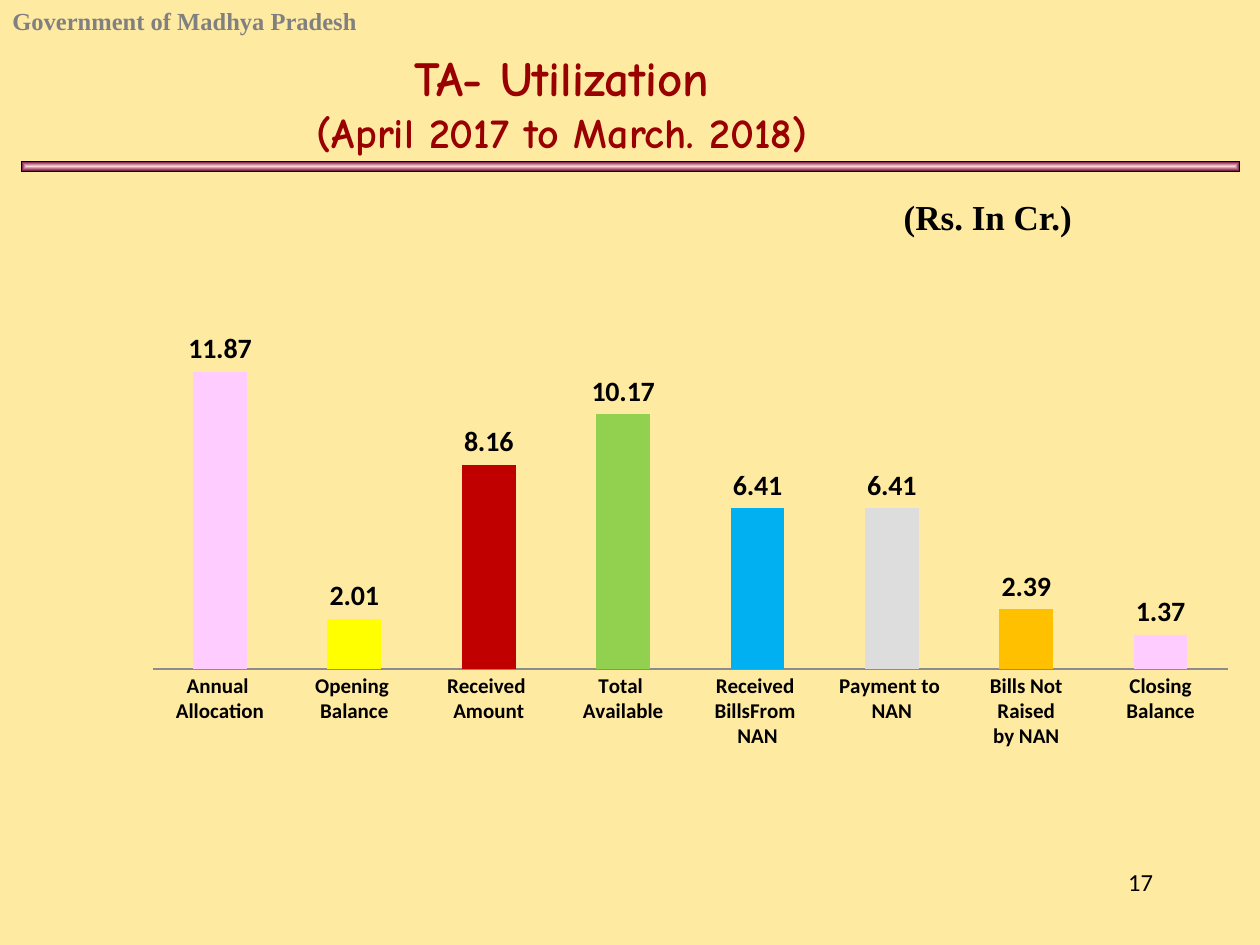
from lxml import etree
from pptx import Presentation, util as u
from pptx.chart.data import CategoryChartData
from pptx.dml.color import RGBColor
from pptx.enum import chart as ch, shapes, text as tx
from pptx.oxml import parse_xml
from pptx.oxml.ns import qn, nsdecls

CREAM = RGBColor(0xFF, 0xEA, 0xA2)
BLACK = RGBColor(0, 0, 0)
GREY = RGBColor(0x80, 0x80, 0x80)
AXIS = RGBColor(0x8C, 0x8C, 0x8C)
RED = RGBColor(0x99, 0, 0)
ROSE = RGBColor(0xFF, 0xD5, 0xD5)
PLUM = RGBColor(0x66, 0, 0x33)
PINK = RGBColor(0xFF, 0xCC, 0xFF)
YELLOW = RGBColor(0xFF, 0xFF, 0)
CRIMSON = RGBColor(0xC0, 0, 0)
GREEN = RGBColor(0x92, 0xD0, 0x50)
BLUE = RGBColor(0, 0xB0, 0xF0)
SILVER = RGBColor(0xDD, 0xDD, 0xDD)
AMBER = RGBColor(0xFF, 0xC0, 0)

BARS = [
    ("Annual \nAllocation", 11.87, PINK),
    ("Opening \nBalance", 2.01, YELLOW),
    ("Received \nAmount", 8.16, CRIMSON),
    ("Total \nAvailable", 10.17, GREEN),
    ("Received \nBillsFrom \nNAN", 6.41, BLUE),
    ("Payment to \nNAN", 6.41, SILVER),
    ("Bills Not Raised\nby NAN", 2.39, AMBER),
    ("Closing Balance", 1.37, PINK),
]

prs = Presentation()
prs.slide_width, prs.slide_height = u.Inches(10), u.Inches(7.5)
slide = prs.slides.add_slide(prs.slide_layouts[5])
slide.background.fill.solid()
slide.background.fill.fore_color.rgb = CREAM


def write(lines, box, sizes, face="Times New Roman", color=BLACK, bold=True,
          align=tx.PP_ALIGN.CENTER, anchor=tx.MSO_ANCHOR.TOP, shape=None):
    """Fill a shape, or a new text box, with one paragraph per line."""
    left, top, wide, high = map(u.Inches, box)
    if shape is None:
        shape = slide.shapes.add_textbox(left, top, wide, high)
    shape.left, shape.top, shape.width, shape.height = left, top, wide, high
    frame = shape.text_frame
    frame.word_wrap = True
    frame.auto_size = tx.MSO_AUTO_SIZE.NONE
    frame.vertical_anchor = anchor
    frame.text = "\n".join(lines)
    for para, size in zip(frame.paragraphs, sizes):
        para.alignment = align
        font = para.runs[0].font
        font.name, font.size, font.bold = face, u.Pt(size), bold
        font.color.rgb = color


write(["Government of Madhya Pradesh"], (0, 0, 6.67, 0.34), [14],
      color=GREY, align=tx.PP_ALIGN.LEFT)

# Rule under the title, light in the middle and dark at the edges
rule = slide.shapes.add_shape(shapes.MSO_SHAPE.RECTANGLE, u.Inches(0.17),
                              u.Inches(1.28), u.Inches(9.67), u.Inches(0.08))
rule.shadow.inherit = False
rule.line.color.rgb = BLACK
rule.line.width = u.Pt(0.5)
rule.fill.gradient()
for stop, color in zip(rule.fill.gradient_stops, (ROSE, PLUM)):
    stop.color.rgb = color
grad = rule.fill._xPr.find(qn("a:gradFill"))
grad.replace(grad.find(qn("a:lin")), parse_xml(
    f'<a:path {nsdecls("a")} path="shape">'
    '<a:fillToRect l="50000" t="50000" r="50000" b="50000"/></a:path>'))

write(["TA- Utilization", "(April 2017 to March. 2018)"],
      (0, 0.32, 8.92, 0.98), [28, 24], face="Comic Neue", color=RED,
      anchor=tx.MSO_ANCHOR.MIDDLE, shape=slide.shapes.title)
write(["(Rs. In Cr.)"], (6.83, 1.5, 2.02, 0.44), [20])

data = CategoryChartData()
data.categories = [name for name, _, _ in BARS]
data.add_series("Series 1", [value for _, value, _ in BARS])
chart = slide.shapes.add_chart(
    ch.XL_CHART_TYPE.COLUMN_CLUSTERED, u.Inches(0.42), u.Inches(1.75),
    u.Inches(9.33), u.Inches(5.42), data).chart
chart.has_legend = chart.has_title = False
chart.font.name, chart.font.size = "Calibri", u.Pt(10)
chart.font.color.rgb = BLACK

plot = chart.plots[0]
plot.gap_width = 150
plot.vary_by_categories = False
series = plot.series[0]
series.format.fill.solid()
series.format.fill.fore_color.rgb = SILVER
for i, (_, _, color) in enumerate(BARS):
    fill = series.points[i].format.fill
    fill.solid()
    fill.fore_color.rgb = color

labels = series.data_labels
labels.show_value = True
labels.position = ch.XL_LABEL_POSITION.OUTSIDE_END
labels.font.size, labels.font.bold = u.Pt(16), True

cats = chart.category_axis
cats.major_tick_mark = ch.XL_TICK_MARK.NONE
cats.format.line.color.rgb = AXIS
cats.tick_labels.font.size, cats.tick_labels.font.bold = u.Pt(12), True
vals = chart.value_axis
vals.visible = vals.has_major_gridlines = False
vals.minimum_scale, vals.maximum_scale = 0, 14

# Fixed inner plot area, as shares of the chart
area = chart._chartSpace.chart.plotArea
for old in area.findall(qn("c:layout")):
    area.remove(old)
layout = etree.Element(qn("c:layout"))
area.insert(0, layout)
manual = etree.SubElement(layout, qn("c:manualLayout"))
for tag, value in (("layoutTarget", "inner"), ("xMode", "edge"),
                   ("yMode", "edge"), ("x", 0.085), ("y", 0.143),
                   ("w", 0.915), ("h", 0.514)):
    etree.SubElement(manual, qn(f"c:{tag}"), val=str(value))

write(["17"], (7.17, 6.83, 2.08, 0.5), [14], face="Calibri", bold=False,
      align=tx.PP_ALIGN.RIGHT)

prs.save("out.pptx")
